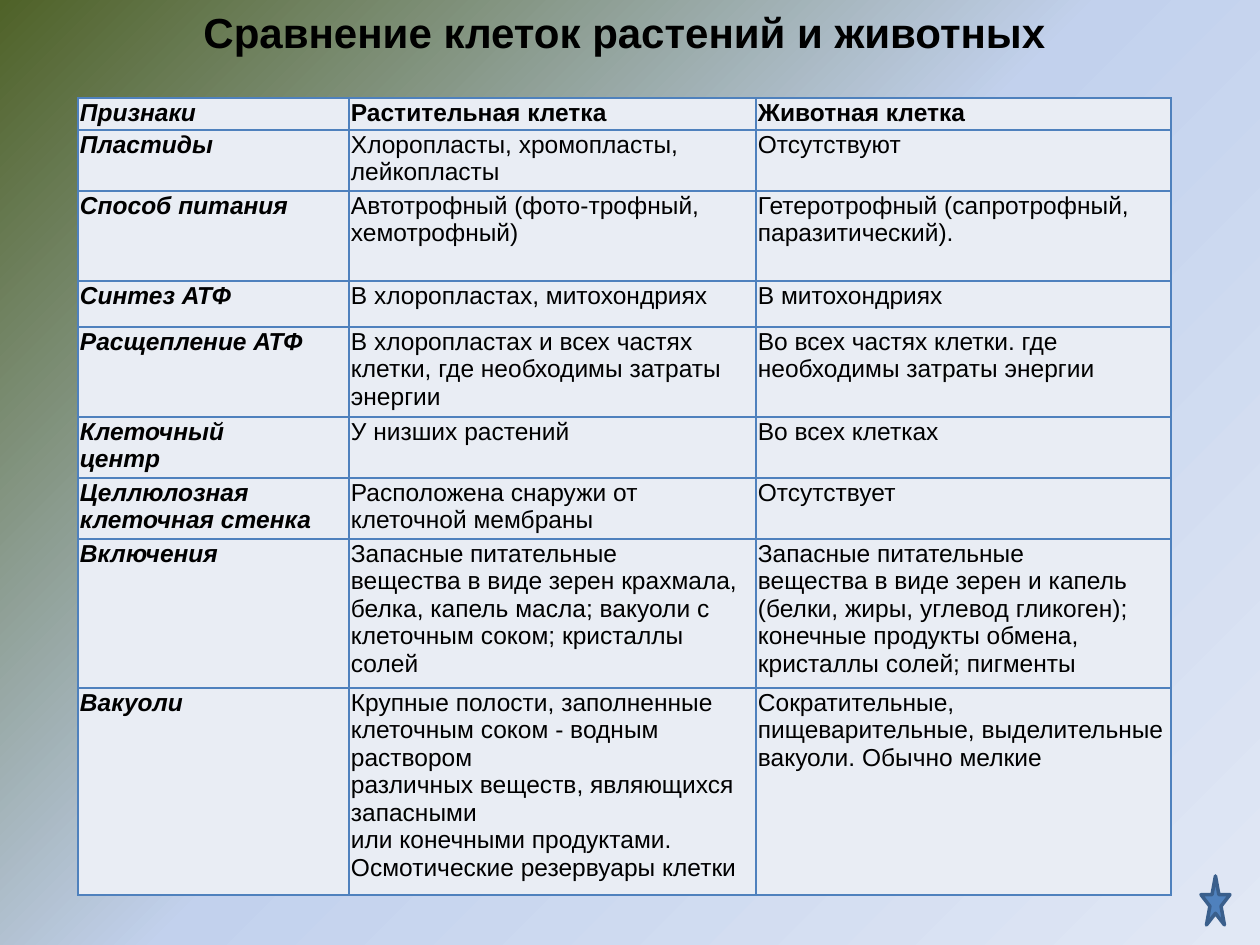
from copy import deepcopy
from enum import Enum

from pptx import Presentation
from pptx.dml.color import RGBColor
from pptx.enum.shapes import MSO_SHAPE
from pptx.enum.text import PP_ALIGN
from pptx.oxml import parse_xml
from pptx.oxml.ns import nsdecls, qn
from pptx.util import Pt

PX = 914400 // 126


class Theme(Enum):
    FONT = "Arial"
    TITLE_SIZE = 24
    CELL_SIZE = 14
    TEXT = "000000"
    CELL = "E9EDF4"
    ACCENT = "4F81BD"
    STAR_LINE = "3A5F8C"
    BACKGROUND = ((0, "4F6228"), (0.5, "C2D1ED"), (1, "E1E8F5"))


def add_span(para, text, size, bold=False, italic=False):
    span = para.add_run()
    span.text = text
    span.font.name = Theme.FONT.value
    span.font.size = Pt(size.value)
    span.font.bold = bold
    span.font.italic = italic
    span.font.color.rgb = RGBColor.from_string(Theme.TEXT.value)


def add_borders(cell):
    """Draw all four sides; the lines must precede the fill in tcPr."""
    properties = cell._tc.get_or_add_tcPr()
    for index, side in enumerate(("lnL", "lnR", "lnT", "lnB")):
        properties.insert(index, parse_xml(
            f'<a:{side} {nsdecls("a")} w="{Pt(1)}"><a:solidFill>'
            f'<a:srgbClr val="{Theme.ACCENT.value}"/></a:solidFill></a:{side}>'))


deck = Presentation()
deck.slide_width = 1260 * PX
deck.slide_height = 945 * PX
page = deck.slides.add_slide(deck.slide_layouts[6])

# Background gradient
backdrop = page.background.fill
backdrop.gradient()
backdrop.gradient_angle = 315
stop_list = page.element.find(".//" + qn("a:gsLst"))
stop_list.append(deepcopy(stop_list[-1]))
for stop, (position, color) in zip(backdrop.gradient_stops, Theme.BACKGROUND.value):
    stop.position = position
    stop.color.rgb = RGBColor.from_string(color)

# Comparison table
ROWS = (
    (32, "Признаки", "Растительная клетка", "Животная клетка"),
    (61, "Пластиды", "Хлоропласты, хромопласты, лейкопласты", "Отсутствуют"),
    (90, "Способ питания", "Автотрофный (фото-трофный, хемотрофный)",
     "Гетеротрофный (сапротрофный, паразитический)."),
    (46, "Синтез АТФ", "В хлоропластах, митохондриях", "В митохондриях"),
    (90, "Расщепление АТФ",
     "В хлоропластах и всех частях клетки, где необходимы затраты энергии",
     "Во всех частях клетки. где необходимы затраты энергии"),
    (61, "Клеточный\nцентр", "У низших растений", "Во всех клетках"),
    (61, "Целлюлозная клеточная стенка",
     "Расположена снаружи от клеточной мембраны", "Отсутствует"),
    (149, "Включения",
     "Запасные питательные\nвещества в виде зерен крахмала, белка, капель масла; "
     "вакуоли с клеточным соком; кристаллы солей",
     "Запасные питательные\nвещества в виде зерен и капель (белки, жиры, углевод "
     "гликоген); конечные продукты обмена, кристаллы солей; пигменты"),
    (207, "Вакуоли",
     "Крупные полости, заполненные клеточным соком - водным раствором\n"
     "различных веществ, являющихся запасными\n"
     "или конечными продуктами. Осмотические резервуары клетки",
     "Сократительные, пищеварительные, выделительные вакуоли. Обычно мелкие"),
)
COLUMNS = (271, 407, 415)
table = page.shapes.add_table(
    len(ROWS), len(COLUMNS), 78 * PX, 98 * PX,
    sum(COLUMNS) * PX, sum(row[0] for row in ROWS) * PX).table
table.first_row = table.horz_banding = False
for column, width in zip(table.columns, COLUMNS):
    column.width = width * PX
for row_index, (height, *texts) in enumerate(ROWS):
    table.rows[row_index].height = height * PX
    for column_index, text in enumerate(texts):
        cell = table.cell(row_index, column_index)
        cell.margin_left = cell.margin_right = 2 * PX
        cell.margin_top = cell.margin_bottom = PX
        cell.fill.solid()
        cell.fill.fore_color.rgb = RGBColor.from_string(Theme.CELL.value)
        add_borders(cell)
        para = cell.text_frame.paragraphs[0]
        for line_index, line in enumerate(text.split("\n")):
            if line_index:
                para.add_line_break()
            add_span(para, line, Theme.CELL_SIZE,
                     bold=row_index == 0 or column_index == 0,
                     italic=column_index == 0)

# Title
box = page.shapes.add_textbox(147 * PX, 0, 955 * PX, 64 * PX)
box.text_frame.word_wrap = True
para = box.text_frame.paragraphs[0]
para.alignment = PP_ALIGN.CENTER
add_span(para, "Сравнение клеток растений и животных", Theme.TITLE_SIZE, bold=True)

# Corner star
star = page.shapes.add_shape(
    MSO_SHAPE.STAR_5_POINT, 1201 * PX, 876 * PX, 29 * PX, 49 * PX)
star.shadow.inherit = False
star.fill.solid()
star.fill.fore_color.rgb = RGBColor.from_string(Theme.ACCENT.value)
star.line.color.rgb = RGBColor.from_string(Theme.STAR_LINE.value)
star.line.width = Pt(2)

deck.save("out.pptx")
